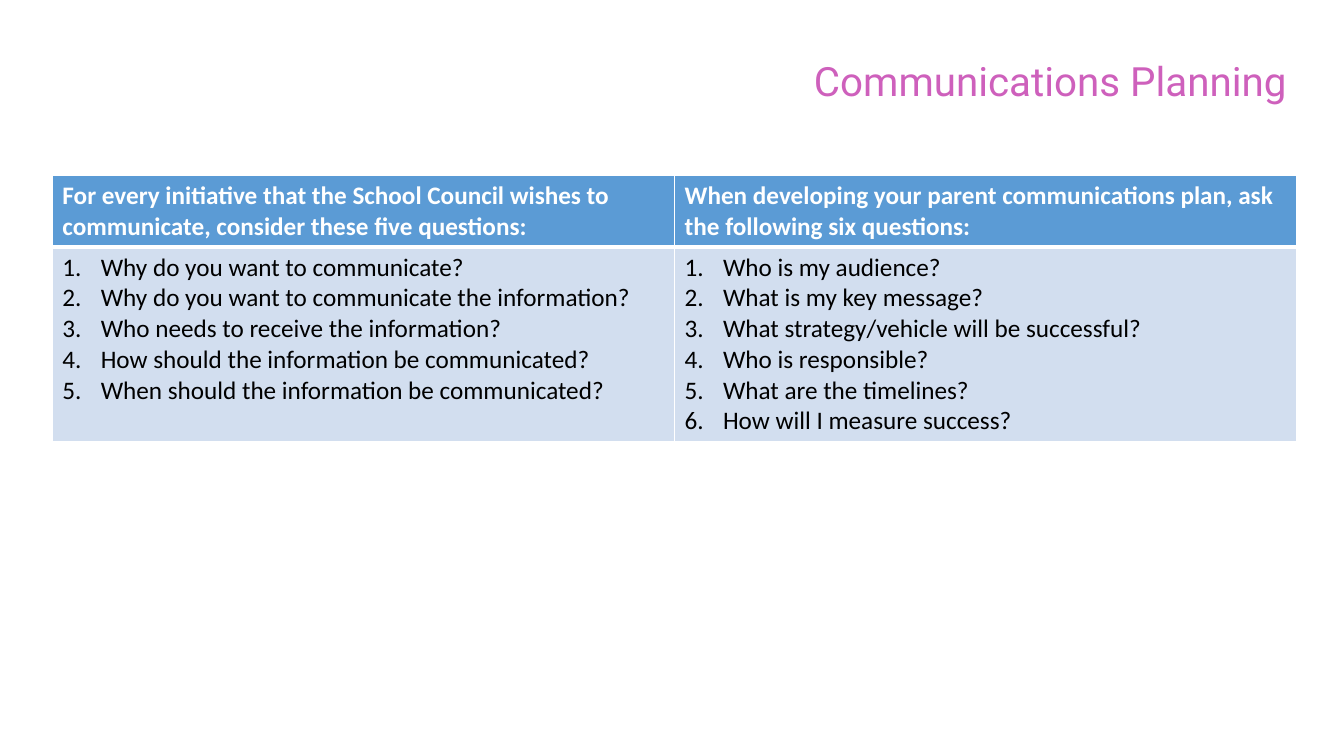
from dataclasses import dataclass

from lxml import etree
from pptx import Presentation
from pptx import util as u
from pptx.dml.color import RGBColor
from pptx.enum import text
from pptx.oxml import ns

SLIDE_W, SLIDE_H = u.Inches(13.33), u.Inches(7.5)
COLORS = {
    "title": "CE60BC",
    "header": "5B9BD5",
    "body": "D2DEEF",
    "white": "FFFFFF",
    "black": "000000",
}
INDENT = u.Inches(0.38)


@dataclass
class Area:
    """A box in shares of the slide's width and height."""
    x: float
    y: float
    w: float
    h: float

    def emu(self) -> tuple[int, int, int, int]:
        return (int(self.x * SLIDE_W), int(self.y * SLIDE_H),
                int(self.w * SLIDE_W), int(self.h * SLIDE_H))


@dataclass
class Column:
    heading: str
    questions: list[str]


TITLE_AREA = Area(0.033, 0.07, 0.932, 0.073)
TABLE_AREA = Area(0.039, 0.232, 0.926, 0.35)
ROW_SHARES = (0.27, 0.73)
COLUMNS = [
    Column(
        "For every initiative that the School Council wishes to communicate, "
        "consider these five questions:",
        ["Why do you want to communicate?",
         "Why do you want to communicate the information?",
         "Who needs to receive the information?",
         "How should the information be communicated?",
         "When should the information be communicated?"]),
    Column(
        "When developing your parent communications plan, ask the following "
        "six questions:",
        ["Who is my audience?",
         "What is my key message?",
         "What strategy/vehicle will be successful?",
         "Who is responsible?",
         "What are the timelines?",
         "How will I measure success?"]),
]


def add_run(p, words: str, font: str, size: float, color: str, bold: bool = False) -> None:
    r = p.add_run()
    r.text = words
    r.font.name, r.font.size, r.font.bold = font, u.Pt(size), bold
    r.font.color.rgb = RGBColor.from_string(COLORS[color])


def number(p) -> None:
    pPr = p._p.get_or_add_pPr()
    pPr.set("marL", str(INDENT))
    pPr.set("indent", str(-INDENT))
    etree.SubElement(pPr, ns.qn("a:buFont"), typeface="+mj-lt")
    etree.SubElement(pPr, ns.qn("a:buAutoNum"), type="arabicPeriod")


def add_borders(cell, top: float, bottom: float) -> None:
    tcPr = cell._tc.get_or_add_tcPr()
    for side, width in (("L", 1), ("R", 1), ("T", top), ("B", bottom)):
        ln = etree.SubElement(tcPr, ns.qn(f"a:ln{side}"), w=str(u.Pt(width)))
        fill = etree.SubElement(ln, ns.qn("a:solidFill"))
        etree.SubElement(fill, ns.qn("a:srgbClr"), val=COLORS["white"])


def fill_cell(cell, lines: list[str], is_header: bool) -> None:
    # Borders come before the fill in the cell's properties
    add_borders(cell, *((1, 3) if is_header else (3, 1)))
    cell.fill.solid()
    cell.fill.fore_color.rgb = RGBColor.from_string(COLORS["header" if is_header else "body"])
    tf = cell.text_frame
    for i, line in enumerate(lines):
        p = tf.add_paragraph() if i else tf.paragraphs[0]
        if not is_header:
            number(p)
        add_run(p, line, "Calibri", 18, "white" if is_header else "black", is_header)


def add_title(s, words: str) -> None:
    sp = s.shapes.title
    sp.left, sp.top, sp.width, sp.height = TITLE_AREA.emu()
    tf = sp.text_frame
    tf.word_wrap = True
    tf.auto_size = text.MSO_AUTO_SIZE.NONE
    tf.vertical_anchor = text.MSO_ANCHOR.MIDDLE
    p = tf.paragraphs[0]
    p.alignment = text.PP_ALIGN.RIGHT
    add_run(p, words, "Roboto", 28.8, "title")


def add_questions(s, columns: list[Column]) -> None:
    area = TABLE_AREA.emu()
    table = s.shapes.add_table(len(ROW_SHARES), len(columns), *area).table
    for row, share in zip(table.rows, ROW_SHARES):
        row.height = int(area[3] * share)
    for c, column in enumerate(columns):
        fill_cell(table.cell(0, c), [column.heading], True)
        fill_cell(table.cell(1, c), column.questions, False)


def main() -> None:
    prs = Presentation()
    prs.slide_width, prs.slide_height = SLIDE_W, SLIDE_H
    s = prs.slides.add_slide(prs.slide_layouts[5])
    add_title(s, "Communications Planning")
    add_questions(s, COLUMNS)
    prs.save("out.pptx")


if __name__ == "__main__":
    main()
